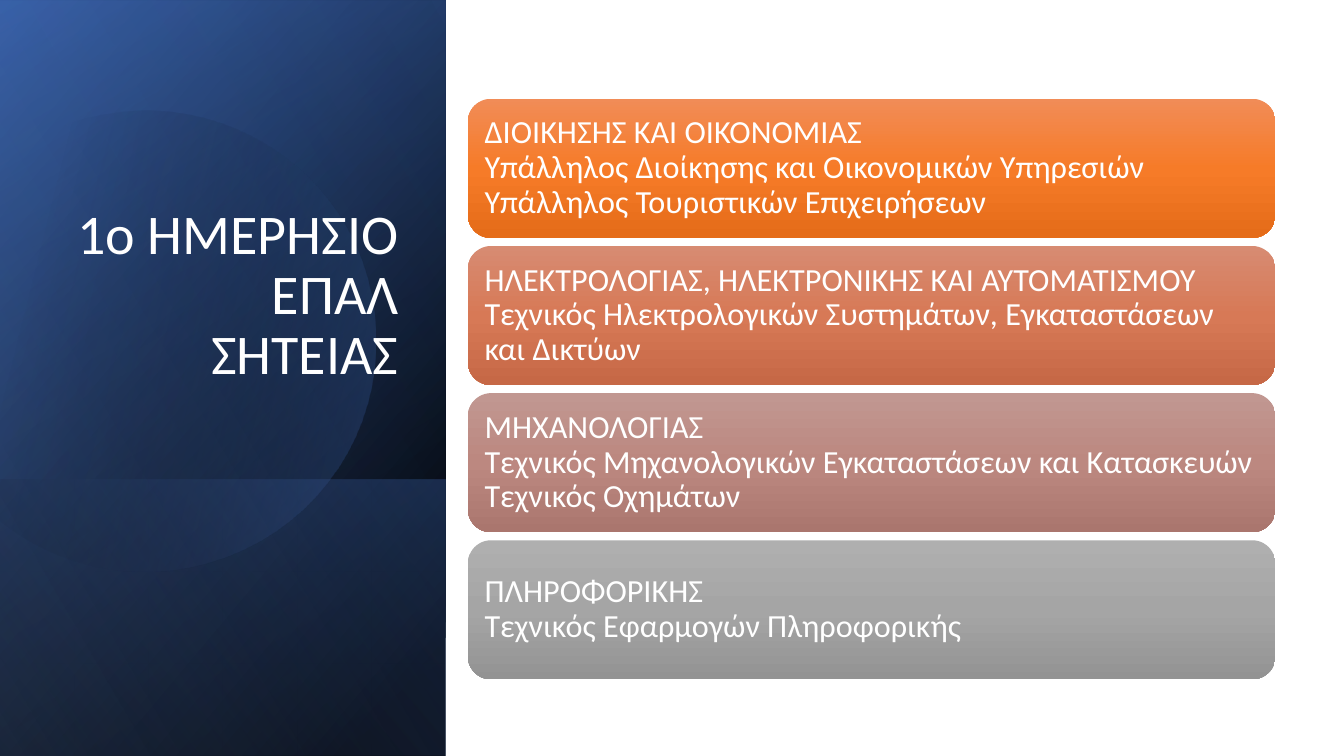
from dataclasses import dataclass
from math import cos, radians, sin

from lxml.etree import SubElement
from pptx import Presentation
from pptx.dml.color import RGBColor
from pptx.enum.shapes import MSO_SHAPE
from pptx.enum.text import MSO_ANCHOR, PP_ALIGN
from pptx.oxml.ns import qn
from pptx.util import Inches, Pt

Point = tuple[float, float]


@dataclass(frozen=True)
class Stop:
    position: int
    color: str
    alpha: int = 100


@dataclass(frozen=True)
class Panel:
    left: float
    top: float
    width: float
    angle: int
    stops: tuple[Stop, ...]


@dataclass(frozen=True)
class Sector:
    lines: tuple[str, ...]
    shades: tuple[str, str, str]


PANEL_HEIGHT = 4.42
PANELS = (
    Panel(-1.54, 1.54, 7.5, 50, (Stop(8, "000000"), Stop(100, "2F5597"))),
    Panel(-1.54, 1.55, 7.5, 30, (Stop(0, "000000", 0), Stop(99, "4472C4", 46))),
    Panel(0.84, 3.92, 2.74, 130, (Stop(2, "4472C4", 29), Stop(100, "000000", 30))),
)
GLOW = Panel(-1.54, 1.54, 7.5, 120, (Stop(0, "000000", 0), Stop(99, "8FAADC", 11)))

# Cut circle: each curve is two control points and an end point
DISC_START = (1.49, 1.1)
DISC_CURVES = (
    ((2.46, 1.12), (3.35, 1.77), (3.63, 2.75)),
    ((3.98, 3.97), (3.28, 5.23), (2.07, 5.58)),
    ((1.31, 5.8), (0.53, 5.61), (-0.03, 5.14)),
    ((-0.15, 5.03), (-0.15, 1.75), (0, 1.61)),
    ((0.23, 1.42), (0.5, 1.28), (0.8, 1.19)),
    ((1.03, 1.13), (1.26, 1.1), (1.49, 1.1)),
)
DISC_EDGE = 3  # this entry is straight
DISC_CENTER = (1.585, 3.345)
DISC_ROTATION = 343.9
DISC_STOPS = (Stop(29, "000000", 0), Stop(100, "4472C4", 43))

SECTORS = (
    Sector(("ΔΙΟΙΚΗΣΗΣ ΚΑΙ ΟΙΚΟΝΟΜΙΑΣ",
            "Υπάλληλος Διοίκησης και Οικονομικών Υπηρεσιών",
            "Υπάλληλος Τουριστικών Επιχειρήσεων"), ("F18C57", "F67B28", "E56C19")),
    Sector(("ΗΛΕΚΤΡΟΛΟΓΙΑΣ, ΗΛΕΚΤΡΟΝΙΚΗΣ ΚΑΙ ΑΥΤΟΜΑΤΙΣΜΟΥ",
            "Τεχνικός Ηλεκτρολογικών Συστημάτων, Εγκαταστάσεων και Δικτύων"),
           ("D78B72", "D77956", "C66846")),
    Sector(("ΜΗΧΑΝΟΛΟΓΙΑΣ",
            "Τεχνικός Μηχανολογικών Εγκαταστάσεων και Κατασκευών",
            "Τεχνικός Οχημάτων"), ("C19791", "BC8880", "AA766E")),
    Sector(("ΠΛΗΡΟΦΟΡΙΚΗΣ", "Τεχνικός Εφαρμογών Πληροφορικής"),
           ("AFAFAF", "A5A5A5", "939393")),
)
SECTOR_TOP, SECTOR_PITCH = 0.98, 1.46

TITLE_FRAME = {"word_wrap": True, "vertical_anchor": MSO_ANCHOR.BOTTOM,
               "margin_bottom": Inches(0.62)}
TITLE_PARAGRAPH = {"alignment": PP_ALIGN.RIGHT, "line_spacing": 0.9,
                   "space_before": Pt(10)}
SECTOR_FRAME = {"word_wrap": True, "vertical_anchor": MSO_ANCHOR.MIDDLE,
                "margin_left": Inches(0.1), "margin_right": Inches(0.1),
                "margin_top": Inches(0.1), "margin_bottom": Inches(0.1)}
SECTOR_PARAGRAPH = {"alignment": PP_ALIGN.LEFT, "line_spacing": 0.9,
                    "space_after": Pt(8)}


def rgb(color: str) -> RGBColor:
    return RGBColor.from_string(color)


def apply_format(target, values: dict) -> None:
    for attribute, value in values.items():
        setattr(target, attribute, value)


def paint(shape, stops: tuple[Stop, ...], angle: int) -> None:
    """Give a shape a linear gradient, no outline and no shadow."""
    shape.shadow.inherit = False
    shape.line.fill.background()
    shape.fill.gradient()
    shape.fill.gradient_angle = 360 - angle
    stop_list = shape._element.spPr.find(qn("a:gradFill")).find(qn("a:gsLst"))
    for default_stop in list(stop_list):
        stop_list.remove(default_stop)
    for stop in stops:
        entry = SubElement(stop_list, qn("a:gs"), pos=str(stop.position * 1000))
        color = SubElement(entry, qn("a:srgbClr"), val=stop.color)
        if stop.alpha < 100:
            SubElement(color, qn("a:alpha"), val=str(stop.alpha * 1000))


def write(shape, text: str, size: int, frame: dict, paragraph: dict) -> None:
    apply_format(shape.text_frame, frame)
    body = shape.text_frame.paragraphs[0]
    body.text = text
    apply_format(body, paragraph)
    for run in body.runs:
        apply_format(run.font, {"name": "Calibri", "size": Pt(size)})
        run.font.color.rgb = rgb("FFFFFF")


def draw_panel(shapes, panel: Panel) -> None:
    rectangle = shapes.add_shape(
        MSO_SHAPE.RECTANGLE, Inches(panel.left), Inches(panel.top),
        Inches(panel.width), Inches(PANEL_HEIGHT))
    rectangle.rotation = 90
    rectangle._element.spPr.find(qn("a:xfrm")).set("flipH", "1")
    paint(rectangle, panel.stops, panel.angle)


def bezier(points: tuple[Point, ...], t: float) -> Point:
    weights = ((1 - t) ** 3, 3 * t * (1 - t) ** 2, 3 * t * t * (1 - t), t ** 3)
    x, y = (sum(w * p[axis] for w, p in zip(weights, points)) for axis in (0, 1))
    return x, y


def unrotate(point: Point) -> Point:
    """Turn a point back, so that the rotated disc lands in place."""
    turn = radians(-DISC_ROTATION)
    dx, dy = point[0] - DISC_CENTER[0], point[1] - DISC_CENTER[1]
    return (DISC_CENTER[0] + dx * cos(turn) - dy * sin(turn),
            DISC_CENTER[1] + dx * sin(turn) + dy * cos(turn))


def draw_disc(shapes, steps: int = 20) -> None:
    outline = [DISC_START]
    for index, curve in enumerate(DISC_CURVES):
        start = outline[-1]
        if index == DISC_EDGE:
            outline.extend(curve)
        else:
            outline.extend(bezier((start, *curve), step / steps)
                           for step in range(1, steps + 1))
    first, *others = [(Inches(x), Inches(y)) for x, y in map(unrotate, outline)]
    builder = shapes.build_freeform(*first)
    builder.add_line_segments(others, close=True)
    disc = builder.convert_to_shape()
    disc.rotation = DISC_ROTATION
    paint(disc, DISC_STOPS, 30)


def draw_sector(shapes, sector: Sector, top: float) -> None:
    card = shapes.add_shape(MSO_SHAPE.ROUNDED_RECTANGLE, Inches(4.64), Inches(top),
                            Inches(8.01), Inches(1.38))
    paint(card, tuple(Stop(50 * i, shade) for i, shade in enumerate(sector.shades)), 90)
    write(card, "\v".join(sector.lines), 23, SECTOR_FRAME, SECTOR_PARAGRAPH)


def main() -> None:
    presentation = Presentation()
    presentation.slide_width = Inches(13.33)
    presentation.slide_height = Inches(7.5)
    shapes = presentation.slides.add_slide(presentation.slide_layouts[6]).shapes

    # Blue side panel
    for panel in PANELS:
        draw_panel(shapes, panel)
    draw_disc(shapes)
    draw_panel(shapes, GLOW)

    # School name
    school = shapes.add_textbox(Inches(0.64), Inches(1.84), Inches(3.41), Inches(2.62))
    write(school, "1ο ΗΜΕΡΗΣΙΟ ΕΠΑΛ ΣΗΤΕΙΑΣ", 40, TITLE_FRAME, TITLE_PARAGRAPH)

    # Sectors and their specialties
    for row, sector in enumerate(SECTORS):
        draw_sector(shapes, sector, SECTOR_TOP + row * SECTOR_PITCH)

    presentation.save("out.pptx")


if __name__ == "__main__":
    main()
